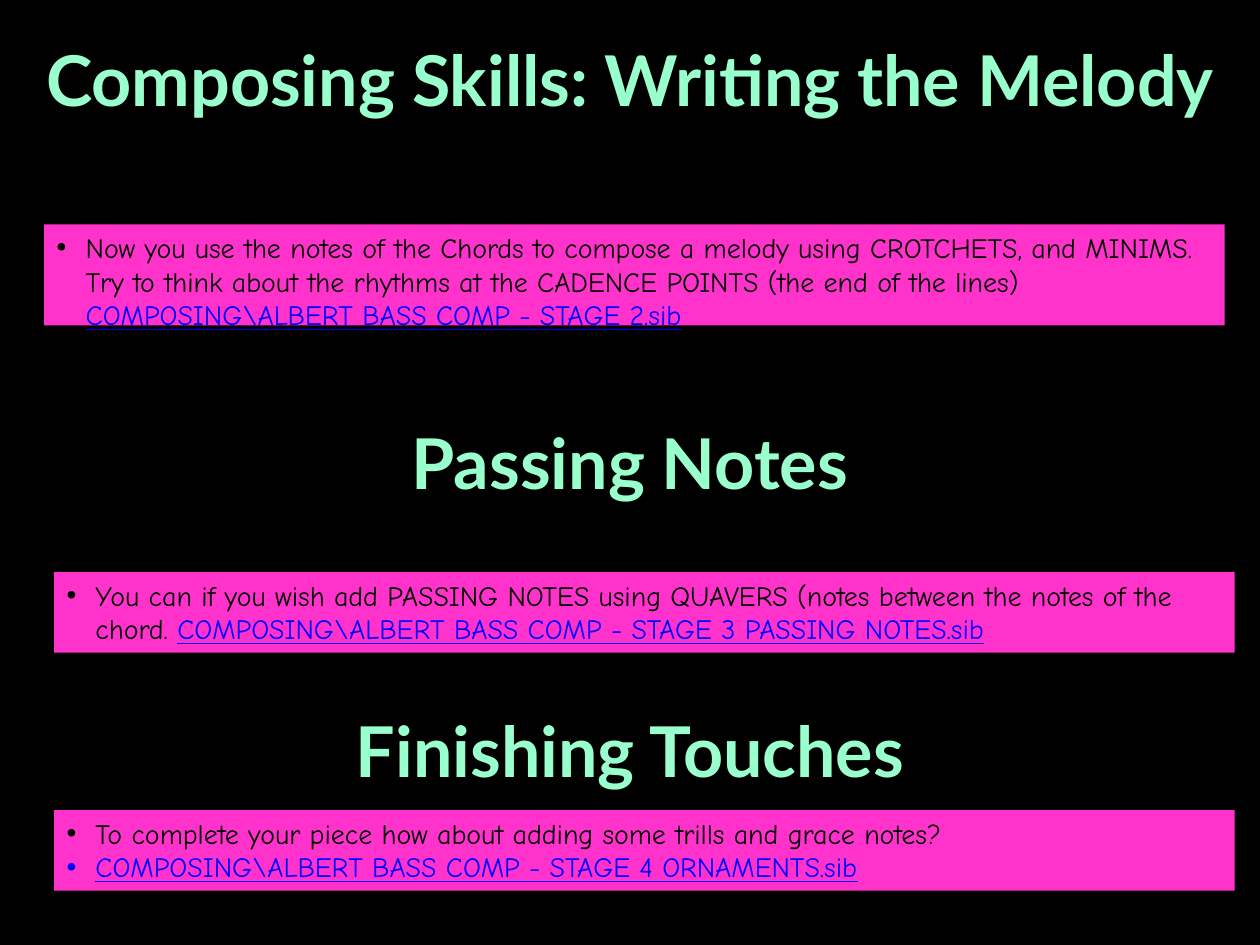
from lxml import etree
from pptx import Presentation
from pptx.dml.color import RGBColor
from pptx.enum.text import MSO_ANCHOR, MSO_AUTO_SIZE, PP_ALIGN
from pptx.oxml.ns import qn
from pptx.util import Inches, Pt

CENTER, LEFT = PP_ALIGN.CENTER, PP_ALIGN.LEFT
MIDDLE, TOP = MSO_ANCHOR.MIDDLE, MSO_ANCHOR.TOP
FIXED, GROW = MSO_AUTO_SIZE.NONE, MSO_AUTO_SIZE.SHAPE_TO_FIT_TEXT

BLACK, PINK, MINT, BLUE = "000000", "FF33CC", "99FFCC", "0000FF"
HEAD = {"name": "Lato", "size": Pt(40), "bold": True}
BODY = {"name": "Comic Neue", "size": Pt(16), "bold": False}
LINK = {**BODY, "underline": True}
INDENT = 0.23

# Each section: heading, heading top, note box, paragraphs of (text, is link)
SECTIONS = [
    ("Composing Skills: Writing the Melody", 0, (0.35, 1.78, 9.37, 0.9), [
        [("Now you use the notes of the Chords to compose a melody using "
          "CROTCHETS, and MINIMS. Try to think about the rhythms at the "
          "CADENCE POINTS (the end of the lines) ", False),
         ("COMPOSING\\ALBERT BASS COMP - STAGE 2.sib", True)]]),
    ("Passing Notes", 3.04, (0.43, 4.54, 9.37, 0.64), [
        [("You can if you wish add PASSING NOTES using QUAVERS (notes "
          "between the notes of the chord. ", False),
         ("COMPOSING\\ALBERT BASS COMP - STAGE 3 PASSING NOTES.sib", True)]]),
    ("Finishing Touches", 5.32, (0.43, 6.43, 9.37, 0.64), [
        [("To complete your piece how about adding some trills and grace "
          "notes?", False)],
        [("COMPOSING\\ALBERT BASS COMP - STAGE 4 ORNAMENTS.sib", True)]]),
]


def paint(fill, color):
    fill.solid()
    fill.fore_color.rgb = RGBColor.from_string(color)


def style(item, values):
    for name, value in values.items():
        setattr(item, name, value)


def place(slide, shape, box):
    """Move the given placeholder, or add a text box when there is none."""
    sizes = [Inches(v) for v in box]
    if shape is None:
        return slide.shapes.add_textbox(*sizes)
    style(shape, dict(zip(("left", "top", "width", "height"), sizes)))
    return shape


def add_run(para, text, font, color):
    run = para.add_run()
    run.text = text
    style(run.font, font)
    paint(run.font.fill, color)


def add_bullet(para):
    props = para._p.get_or_add_pPr()
    props.set("marL", str(Inches(INDENT)))
    props.set("indent", str(-Inches(INDENT)))
    etree.SubElement(props, qn("a:buFont")).set("typeface", "Arial")
    etree.SubElement(props, qn("a:buChar")).set("char", "•")


def add_head(slide, shape, text, top):
    frame = place(slide, shape, (0, top, 10, 1.25)).text_frame
    style(frame, {"word_wrap": True, "auto_size": FIXED,
                  "vertical_anchor": MIDDLE})
    para = frame.paragraphs[0]
    para.alignment = CENTER
    add_run(para, text, HEAD, MINT)


def add_note(slide, shape, box, paras):
    shape = place(slide, shape, box)
    paint(shape.fill, PINK)
    frame = shape.text_frame
    style(frame, {"word_wrap": True, "auto_size": GROW,
                  "vertical_anchor": TOP})
    for i, runs in enumerate(paras):
        para = frame.add_paragraph() if i else frame.paragraphs[0]
        style(para, {"alignment": LEFT, "space_before": Pt(0)})
        add_bullet(para)
        for text, link in runs:
            add_run(para, text, LINK if link else BODY,
                    BLUE if link else BLACK)


def main():
    deck = Presentation()
    deck.slide_width, deck.slide_height = Inches(10), Inches(7.5)
    slide = deck.slides.add_slide(deck.slide_layouts[1])
    paint(slide.background.fill, BLACK)
    title, body = slide.shapes.title, slide.placeholders[1]
    for text, top, box, paras in SECTIONS:
        add_head(slide, title, text, top)
        add_note(slide, body, box, paras)
        title = body = None
    deck.save("out.pptx")


if __name__ == "__main__":
    main()
